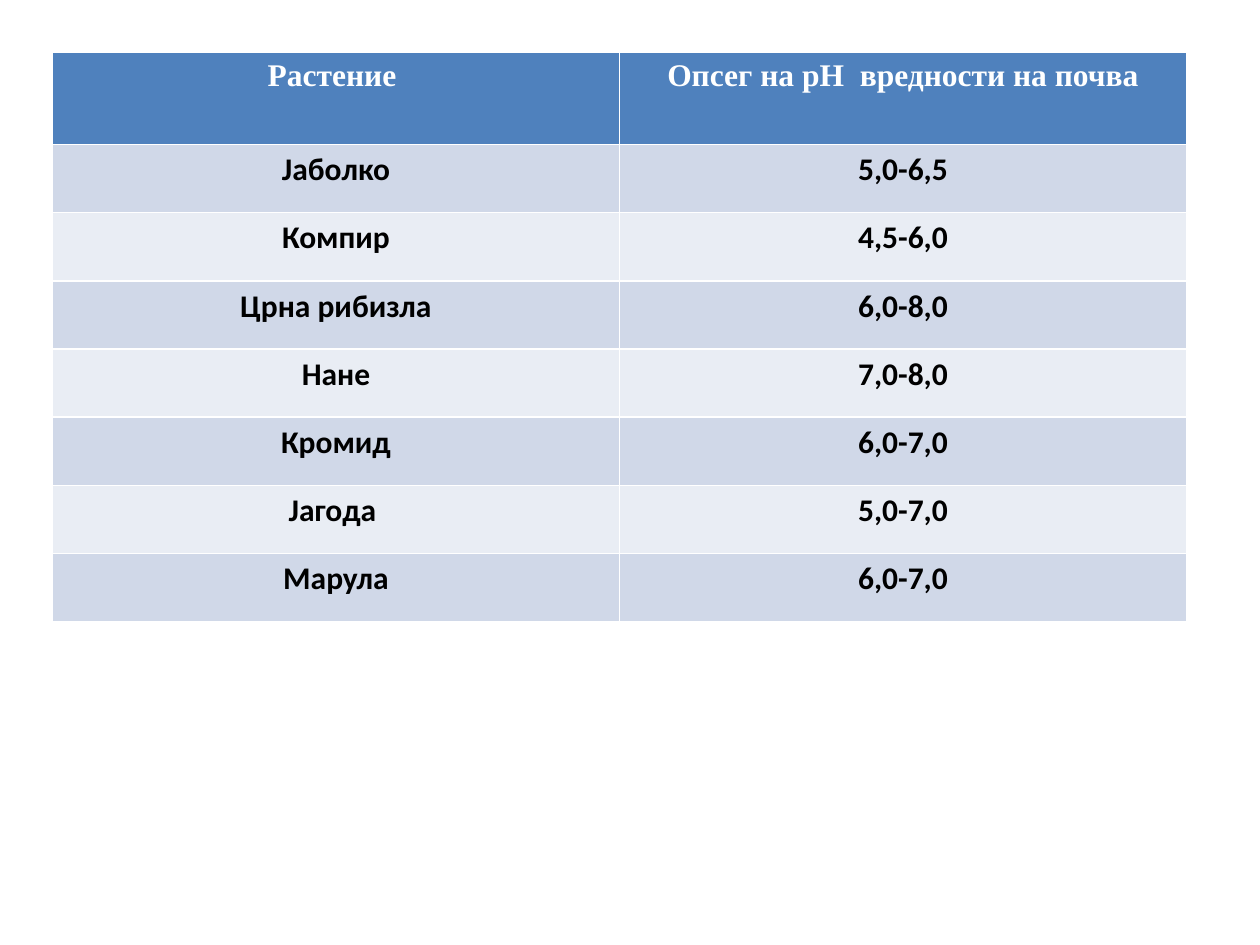
from dataclasses import dataclass

from pptx import Presentation
from pptx.dml.color import RGBColor
from pptx.enum.text import PP_ALIGN
from pptx.util import Pt

CENTER = PP_ALIGN.CENTER


@dataclass(frozen=True)
class Theme:
    header_fill: str = "4F81BD"
    band_fills: tuple = ("D0D8E8", "E9EDF4")
    header_text: str = "FFFFFF"
    body_text: str = "000000"
    header_font: str = "Times New Roman"
    body_font: str = "Calibri"
    size: int = 18


THEME = Theme()
LEFT, TOP = 30, 30
COLUMN_WIDTH = 324
HEADER_HEIGHT, ROW_HEIGHT = 52.5, 39

HEADER = ("Растение ", "Опсег на pH  вредности на почва")
PLANTS = [
    ("Јаболко", "5,0-6,5"),
    ("Компир", "4,5-6,0"),
    ("Црна рибизла", "6,0-8,0"),
    ("Нане", "7,0-8,0"),
    ("Кромид", "6,0-7,0"),
    ("Јагода ", "5,0-7,0"),
    ("Марула", "6,0-7,0"),
]


def fill_row(table, index, texts, fill, font, color):
    for cell, text in zip(table.rows[index].cells, texts):
        cell.fill.solid()
        cell.fill.fore_color.rgb = RGBColor.from_string(fill)
        p = cell.text_frame.paragraphs[0]
        p.text = text
        p.alignment = CENTER
        p.font.name = font
        p.font.size = Pt(THEME.size)
        p.font.bold = True
        p.font.color.rgb = RGBColor.from_string(color)


def add_ph_table(s):
    """Add the table; its default style supplies the white cell borders."""
    columns = len(HEADER)
    height = HEADER_HEIGHT + ROW_HEIGHT * len(PLANTS)
    table = s.shapes.add_table(
        len(PLANTS) + 1, columns, Pt(LEFT), Pt(TOP),
        Pt(COLUMN_WIDTH * columns), Pt(height),
    ).table
    for row in table.rows:
        row.height = Pt(ROW_HEIGHT)
    table.rows[0].height = Pt(HEADER_HEIGHT)

    fill_row(table, 0, HEADER, THEME.header_fill, THEME.header_font, THEME.header_text)
    for i, plant in enumerate(PLANTS):
        band = THEME.band_fills[i % len(THEME.band_fills)]
        fill_row(table, i + 1, plant, band, THEME.body_font, THEME.body_text)


def main():
    prs = Presentation()
    prs.slide_width, prs.slide_height = Pt(720), Pt(540)
    s = prs.slides.add_slide(prs.slide_layouts[6])
    add_ph_table(s)
    prs.save("out.pptx")


if __name__ == "__main__":
    main()
